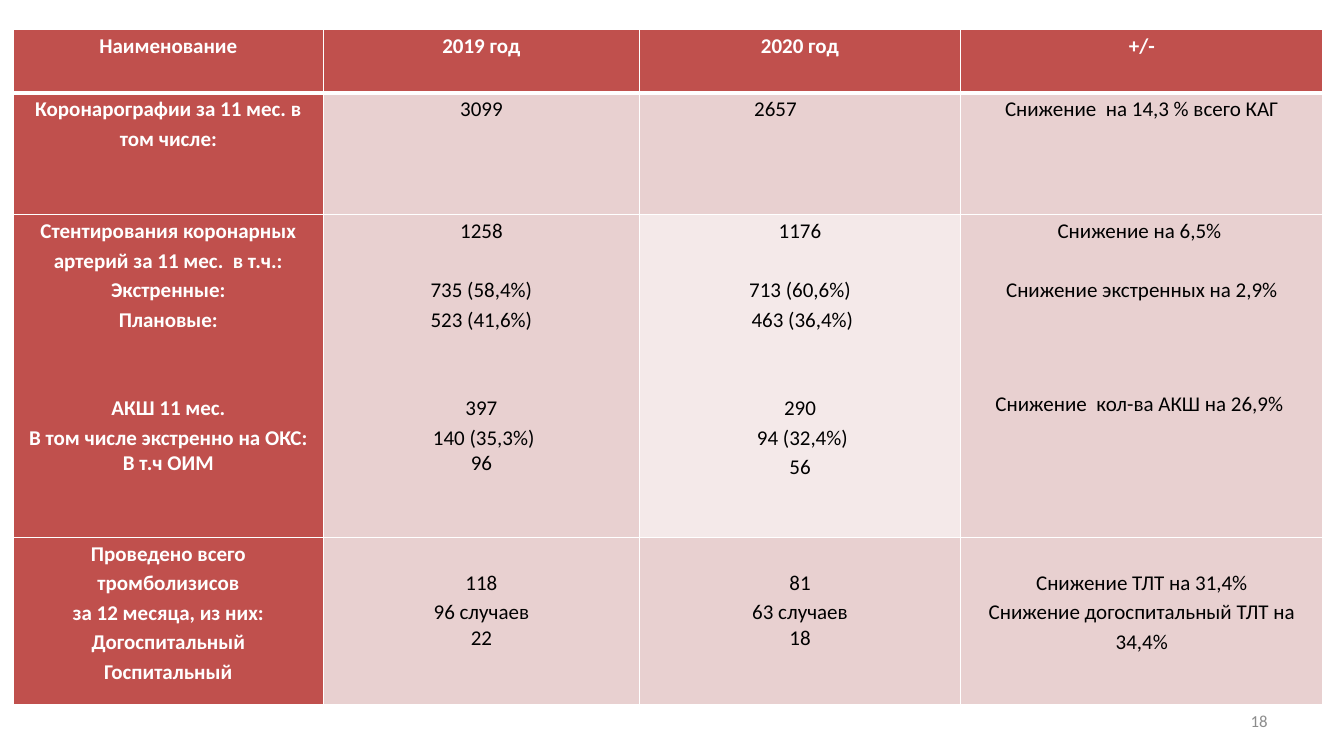
import dataclasses

import lxml.etree
import pptx
import pptx.dml.color
import pptx.enum.text
import pptx.oxml.ns
import pptx.util

RED = pptx.dml.color.RGBColor(0xC0, 0x50, 0x4D)
PINK = pptx.dml.color.RGBColor(0xE8, 0xD0, 0xD0)
PALE = pptx.dml.color.RGBColor(0xF4, 0xE9, 0xE9)
WHITE = pptx.dml.color.RGBColor(0xFF, 0xFF, 0xFF)
BLACK = pptx.dml.color.RGBColor(0, 0, 0)
GRAY = pptx.dml.color.RGBColor(0x8C, 0x8C, 0x8C)

ALIGN = pptx.enum.text.PP_ALIGN
ANCHOR = pptx.enum.text.MSO_ANCHOR
EMU_PER_PX = 9144  # 100 px to the inch
LINE_POINTS = 21  # height of one table line
LINE_PX = 29


@dataclasses.dataclass
class Line:
    text: str
    spacing: float = 1.15
    indent: int = 0


def px(length):
    return pptx.util.Emu(length * EMU_PER_PX)


def write(para, text, font="Calibri", size=15, color=BLACK, bold=False,
          align=ALIGN.CENTER, spacing=1.0, before=0, indent=0):
    para.alignment = align
    para.line_spacing = spacing
    para.space_before = pptx.util.Pt(before)
    if indent:
        para._p.get_or_add_pPr().set("marL", str(px(indent)))
    span = para.add_run()
    span.text = text
    span.font.name = font
    span.font.size = pptx.util.Pt(size)
    span.font.bold = bold
    span.font.color.rgb = color


class SlideBuilder:
    def __init__(self, deck):
        self.slide = deck.slides.add_slide(deck.slide_layouts[6])

    def text(self, left, top, width, height, text, **style):
        box = self.slide.shapes.add_textbox(px(left), px(top), px(width), px(height))
        frame = box.text_frame
        frame.word_wrap = True
        frame.vertical_anchor = ANCHOR.MIDDLE
        write(frame.paragraphs[0], text, **style)

    def borders(self, cell, **widths):
        properties = cell._tc.get_or_add_tcPr()
        for position, (side, width) in enumerate(widths.items()):
            edge = lxml.etree.Element(pptx.oxml.ns.qn("a:ln" + side),
                                      w=str(pptx.util.Pt(width)))
            fill = lxml.etree.SubElement(edge, pptx.oxml.ns.qn("a:solidFill"))
            lxml.etree.SubElement(fill, pptx.oxml.ns.qn("a:srgbClr"), val=str(WHITE))
            properties.insert(position, edge)

    def cell(self, cell, lines, fill, color, bold):
        """Fill a cell; an empty line becomes space above the next one."""
        cell.fill.solid()
        cell.fill.fore_color.rgb = fill
        cell.margin_left = cell.margin_right = px(5)
        cell.margin_top = cell.margin_bottom = 0
        cell.vertical_anchor = ANCHOR.TOP
        frame = cell.text_frame
        started, skipped = False, 0
        for line in lines:
            if line == "":
                skipped += 1
                continue
            if isinstance(line, str):
                line = Line(line)
            if started:
                para, before = frame.add_paragraph(), skipped * LINE_POINTS
            else:
                para, before = frame.paragraphs[0], 0
                cell.margin_top = px(skipped * LINE_PX)
            write(para, line.text, color=color, bold=bold, spacing=line.spacing,
                  before=before, indent=line.indent,
                  align=ALIGN.LEFT if line.indent else ALIGN.CENTER)
            started, skipped = True, 0

    def table(self, left, top, widths, heights, rows, highlight):
        frame = self.slide.shapes.add_table(len(rows), len(widths), px(left), px(top),
                                            px(sum(widths)), px(sum(heights)))
        table = frame.table
        table.horz_banding = False
        for column, width in zip(table.columns, widths):
            column.width = px(width)
        for r, (height, row) in enumerate(zip(heights, rows)):
            table.rows[r].height = px(height)
            for c, lines in enumerate(row):
                heading = r == 0 or c == 0
                fill = RED if heading else PALE if (r, c) == highlight else PINK
                cell = table.cell(r, c)
                self.cell(cell, lines, fill, WHITE if heading else BLACK, heading)
                self.borders(cell, L=1, R=1, T=3 if r == 1 else 1, B=3 if r == 0 else 1)


ROWS = [
    [["Наименование"], ["2019 год"], ["2020 год"], ["+/-"]],
    [
        ["Коронарографии за 11 мес. в том числе:"],
        ["3099"],
        [Line("2657", indent=109)],
        ["Снижение  на 14,3 % всего КАГ"],
    ],
    [
        ["Стентирования коронарных", "артерий за 11 мес.  в т.ч.:", "Экстренные:",
         "Плановые:", "", "", "АКШ 11 мес.", "В том числе экстренно на ОКС:",
         Line("В т.ч ОИМ", spacing=1.0)],
        ["1258", "", "735 (58,4%)", "523 (41,6%)", "", "", "397", " 140 (35,3%)",
         Line("96", spacing=1.0)],
        ["1176", "", "713 (60,6%)", " 463 (36,4%)", "", "", "290", " 94 (32,4%)", "56"],
        ["Снижение на 6,5% ", "", "Снижение экстренных на 2,9%", "", "", "",
         Line("Снижение  кол-ва АКШ на 26,9% ", spacing=1.0)],
    ],
    [
        ["Проведено всего тромболизисов", "за 12 месяца, из них:", "Догоспитальный",
         "Госпитальный"],
        ["", "118", "96 случаев", Line("22", spacing=1.0)],
        ["", "81", "63 случаев", Line("18", spacing=1.0)],
        ["", "Снижение ТЛТ на 31,4%", "Снижение догоспитальный ТЛТ на 34,4%"],
    ],
]


def main():
    deck = pptx.Presentation()
    deck.slide_width, deck.slide_height = px(1333), px(750)
    page = SlideBuilder(deck)
    # Page number
    page.text(956, 695, 311, 40, "18", size=12, color=GRAY, align=ALIGN.RIGHT)
    # Comparison of the two years
    page.table(13, 29, [308, 313, 319, 359], [63, 121, 320, 166], ROWS, highlight=(2, 2))
    deck.save("out.pptx")


if __name__ == "__main__":
    main()
